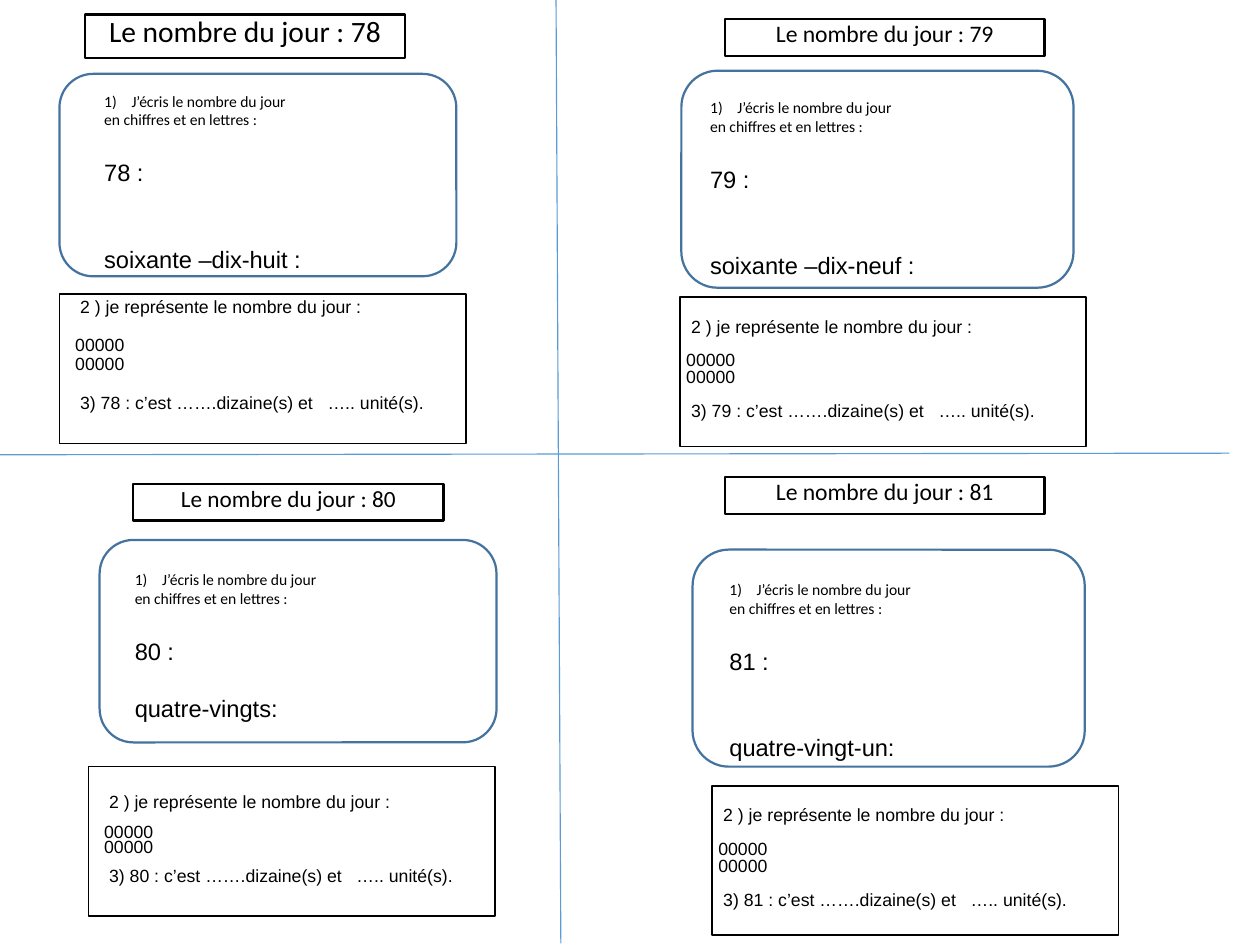
from dataclasses import dataclass

from lxml import etree
from pptx import Presentation
from pptx.dml.color import RGBColor
from pptx.enum.shapes import MSO_CONNECTOR, MSO_SHAPE
from pptx.enum.text import MSO_ANCHOR, PP_ALIGN
from pptx.oxml.ns import qn
from pptx.util import Inches, Pt

RECTANGLE = MSO_SHAPE.RECTANGLE
ROUNDED = MSO_SHAPE.ROUNDED_RECTANGLE
STRAIGHT = MSO_CONNECTOR.STRAIGHT
TOP, BOTTOM = MSO_ANCHOR.TOP, MSO_ANCHOR.BOTTOM
LEFT, CENTER = PP_ALIGN.LEFT, PP_ALIGN.CENTER

COLORS = {"divider": "5B9BD5", "frame": "43739E", "ink": "000000", "paper": "FFFFFF"}
WIDE_MARGINS = (0.1, 0.05)
NARROW_MARGINS = (0.04, 0.02)
DOTS_TAB = 1.57
LINE_HEIGHT = 9.4
LAST_LINE_GAP = 0.14


@dataclass
class Card:
    number: int
    words: str
    title_box: tuple
    title_size: float
    title_spacing: float
    frame_box: tuple
    writing_box: tuple
    words_gap: float
    counting_box: tuple
    counting_spacing: float
    title_margins: tuple = NARROW_MARGINS
    counting_margins: tuple = NARROW_MARGINS


CARDS = [
    Card(78, "soixante –dix-huit :", (0.53, 0.09, 1.99, 0.27), 13.2, 0.7,
         (0.37, 0.46, 2.47, 1.26), (0.55, 0.52, 1.81, 1.05), 26,
         (0.37, 1.83, 2.53, 0.93), 0.9, WIDE_MARGINS, WIDE_MARGINS),
    Card(79, "soixante –dix-neuf :", (4.51, 0.12, 1.99, 0.23), 10.6, 0.9,
         (4.24, 0.44, 2.44, 1.35), (4.32, 0.56, 1.81, 1.05), 26,
         (4.23, 1.85, 2.53, 0.93), 0.8),
    Card(80, "quatre-vingts:", (0.83, 3.01, 1.93, 0.23), 10.4, 0.7,
         (0.62, 3.36, 2.47, 1.26), (0.74, 3.5, 1.81, 0.87), 13,
         (0.55, 4.77, 2.53, 0.93), 0.7, WIDE_MARGINS, WIDE_MARGINS),
    Card(81, "quatre-vingt-un:", (4.51, 2.97, 1.99, 0.23), 10.6, 0.9,
         (4.31, 3.42, 2.44, 1.35), (4.44, 3.56, 1.81, 1.05), 26,
         (4.43, 4.89, 2.53, 0.93), 0.8),
]


def color(name):
    return RGBColor.from_string(COLORS[name])


def lengths(values):
    return [Inches(value) for value in values]


def add_divider(slide, *ends):
    connector = slide.shapes.add_connector(STRAIGHT, *lengths(ends))
    connector.line.color.rgb = color("divider")
    connector.line.width = Pt(0.5)
    etree.SubElement(connector._element.spPr, qn("a:effectLst"))


def add_outline(slide, preset, box, line, width, fill=None):
    shape = slide.shapes.add_shape(preset, *lengths(box))
    shape.shadow.inherit = False
    if fill:
        shape.fill.solid()
        shape.fill.fore_color.rgb = color(fill)
    else:
        shape.fill.background()
    shape.line.color.rgb = color(line)
    shape.line.width = Pt(width)
    return shape


def set_frame(frame, margins, anchor):
    frame.word_wrap = True
    frame.vertical_anchor = anchor
    frame.margin_left = frame.margin_right = Inches(margins[0])
    frame.margin_top = frame.margin_bottom = Inches(margins[1])


def write_paragraph(paragraph, text, size, font, spacing=1.0, before=0, align=LEFT):
    paragraph.text = text
    paragraph.alignment = align
    paragraph.line_spacing = spacing
    paragraph.space_before = Pt(before)
    paragraph.font.size = Pt(size)
    paragraph.font.name = font
    paragraph.font.color.rgb = color("ink")


def number_paragraph(paragraph):
    """Give the paragraph an automatic 1) with a hanging indent."""
    properties = paragraph._p.get_or_add_pPr()
    properties.set("marL", str(Inches(0.17)))
    properties.set("indent", str(-Inches(0.17)))
    numbering = etree.Element(qn("a:buAutoNum"), type="arabicParenR")
    properties.find(qn("a:defRPr")).addprevious(numbering)


def add_tab_stop(paragraph, position):
    tabs = etree.Element(qn("a:tabLst"))
    etree.SubElement(tabs, qn("a:tab"), pos=str(Inches(position)), algn="l")
    paragraph._p.get_or_add_pPr().find(qn("a:defRPr")).addprevious(tabs)


def next_paragraph(frame, index):
    return frame.add_paragraph() if index else frame.paragraphs[0]


def add_title(slide, card):
    shape = add_outline(slide, RECTANGLE, card.title_box, "ink", 1, "paper")
    set_frame(shape.text_frame, card.title_margins, TOP)
    write_paragraph(shape.text_frame.paragraphs[0], f"Le nombre du jour : {card.number}",
                    card.title_size, "Calibri", card.title_spacing, align=CENTER)


def add_writing_exercise(slide, card):
    add_outline(slide, ROUNDED, card.frame_box, "frame", 1)
    frame = slide.shapes.add_textbox(*lengths(card.writing_box)).text_frame
    set_frame(frame, WIDE_MARGINS, TOP)
    lines = [
        ("J’écris le nombre du jour", 7, "Calibri", 0),
        ("en chiffres et en lettres :", 7, "Calibri", 0),
        (f"{card.number} :", 10.6, "Arial", 13),
        (card.words, 10.6, "Arial", card.words_gap),
    ]
    for index, (text, size, font, before) in enumerate(lines):
        write_paragraph(next_paragraph(frame, index), text, size, font, before=before)
    number_paragraph(frame.paragraphs[0])


def add_counting_exercise(slide, card):
    shape = add_outline(slide, RECTANGLE, card.counting_box, "ink", 0.75)
    frame = shape.text_frame
    set_frame(frame, card.counting_margins, BOTTOM)
    frame.margin_bottom = Inches(card.counting_margins[1] + LAST_LINE_GAP)
    gap = round(LINE_HEIGHT * card.counting_spacing, 1)
    lines = [
        (" 2 ) je représente le nombre du jour :", 0),
        ("00000", gap),
        ("00000", 0),
        (f" 3) {card.number} : c’est …….dizaine(s) et\t….. unité(s).", gap),
    ]
    for index, (text, before) in enumerate(lines):
        write_paragraph(next_paragraph(frame, index), text, 7.9, "Arial",
                        card.counting_spacing, before)
    add_tab_stop(frame.paragraphs[-1], DOTS_TAB)


def main():
    presentation = Presentation()
    presentation.slide_width = Inches(7.84)
    presentation.slide_height = Inches(5.88)
    slide = presentation.slides.add_slide(presentation.slide_layouts[6])
    add_divider(slide, 3.46, 0, 3.49, 5.87)
    add_divider(slide, -0.23, 2.83, 7.65, 2.82)
    for card in CARDS:
        add_title(slide, card)
        add_writing_exercise(slide, card)
        add_counting_exercise(slide, card)
    presentation.save("out.pptx")


if __name__ == "__main__":
    main()
